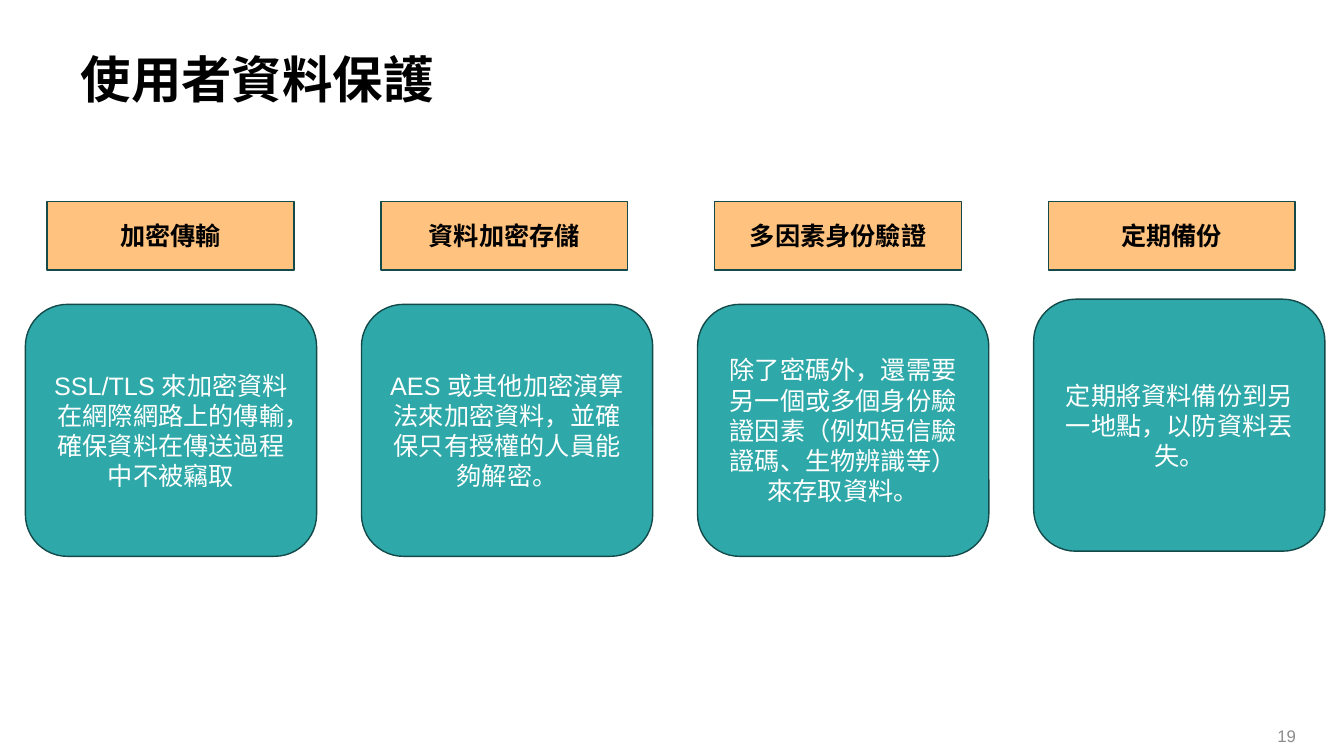
"""Build the slide on user data protection: four measures with descriptions."""
from pptx import Presentation
from pptx.dml.color import RGBColor
from pptx.enum.shapes import MSO_SHAPE as Shape
from pptx.enum.text import MSO_ANCHOR as Anchor, MSO_AUTO_SIZE as AutoSize, PP_ALIGN as Align
from pptx.util import Cm, Pt

TITLE = "使用者資料保護"
PAGE_NUMBER = "19"
MEASURES = [
    ("加密傳輸", "SSL/TLS 來加密資料在網際網路上的傳輸，確保資料在傳送過程中不被竊取"),
    ("資料加密存儲", "AES 或其他加密演算法來加密資料，並確保只有授權的人員能夠解密。"),
    ("多因素身份驗證", "除了密碼外，還需要另一個或多個身份驗證因素（例如短信驗證碼、生物辨識等）來存取資料。"),
    ("定期備份", "定期將資料備份到另一地點，以防資料丟失。"),
]
CARD_TOPS = [7.67, 7.67, 7.67, 7.54]
CARD_LEFT, CARD_PITCH, CARD_SIZE = 0.64, 8.47, (7.34, 6.35)
LABEL_LEFT, LABEL_PITCH, LABEL_TOP, LABEL_SIZE = 1.19, 8.41, 5.08, (6.22, 1.73)
CARD_FILL, LABEL_FILL, OUTLINE = "2EA8A8", "FFC27F", "144A4A"
CARD_FONT = {"size": Pt(18), "bold": False}
LABEL_FONT = {"size": Pt(18), "bold": True}
TITLE_FONT = {"size": Pt(36), "bold": True}
NUMBER_FONT = {"size": Pt(12), "bold": False}


def color(value):
    return RGBColor.from_string(value)


def write(shape, text, font_format, text_color, alignment):
    frame = shape.text_frame
    frame.text = text
    frame.word_wrap = True
    frame.auto_size = AutoSize.NONE
    frame.vertical_anchor = Anchor.MIDDLE
    paragraph = frame.paragraphs[0]
    paragraph.alignment = alignment
    font = paragraph.runs[0].font
    for name, value in {"name": "Arial", **font_format}.items():
        setattr(font, name, value)
    font.color.rgb = color(text_color)


def add_box(slide, kind, left, top, size, fill):
    shape = slide.shapes.add_shape(kind, Cm(left), Cm(top), *map(Cm, size))
    shape.shadow.inherit = False
    shape.fill.solid()
    shape.fill.fore_color.rgb = color(fill)
    shape.line.color.rgb = color(OUTLINE)
    shape.line.width = Pt(1)
    return shape


def main():
    presentation = Presentation()
    presentation.slide_width, presentation.slide_height = Cm(33.87), Cm(19.05)
    slide = presentation.slides.add_slide(presentation.slide_layouts[5])

    title = slide.shapes.title
    title_place = {"left": 1.78, "top": 1.02, "width": 31.17, "height": 1.93}
    for name, value in title_place.items():
        setattr(title, name, Cm(value))
    write(title, TITLE, TITLE_FONT, "000000", Align.LEFT)

    for column, ((label, description), top) in enumerate(zip(MEASURES, CARD_TOPS)):
        card = add_box(slide, Shape.ROUNDED_RECTANGLE, CARD_LEFT + column * CARD_PITCH,
                       top, CARD_SIZE, CARD_FILL)
        write(card, description, CARD_FONT, "FFFFFF", Align.CENTER)
        heading = add_box(slide, Shape.RECTANGLE, LABEL_LEFT + column * LABEL_PITCH,
                          LABEL_TOP, LABEL_SIZE, LABEL_FILL)
        write(heading, label, LABEL_FONT, "000000", Align.CENTER)

    number = slide.shapes.add_textbox(Cm(29.46), Cm(18.03), Cm(3.45), Cm(1.02))
    write(number, PAGE_NUMBER, NUMBER_FONT, "8C8C8C", Align.RIGHT)
    presentation.save("out.pptx")


if __name__ == "__main__":
    main()
